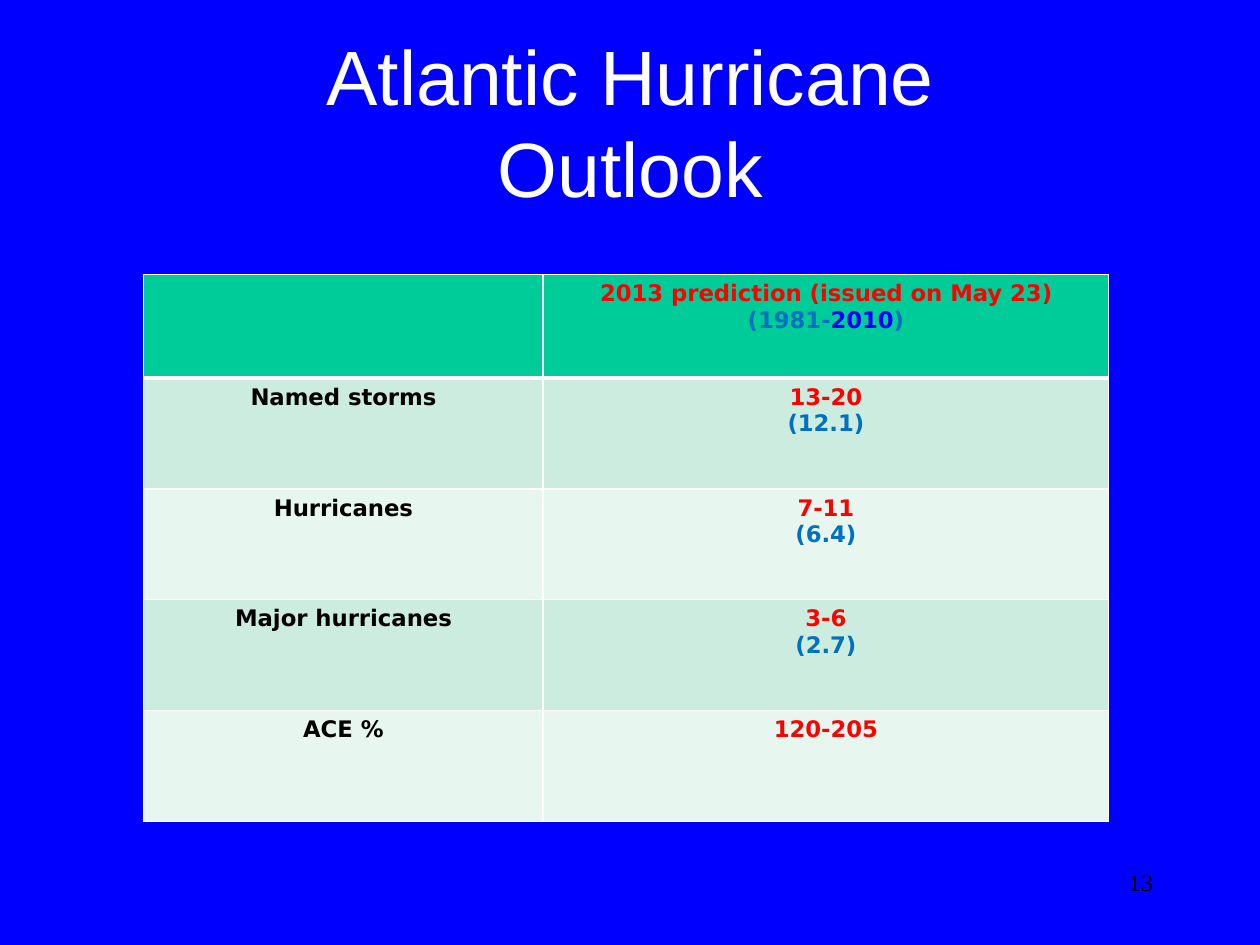
"""Build the Atlantic hurricane outlook slide."""
import pptx
import pptx.util
import pptx.dml.color
import pptx.enum.text
import pptx.oxml.ns
import lxml.etree

Inches = pptx.util.Inches
Align = pptx.enum.text.PP_ALIGN
Anchor = pptx.enum.text.MSO_ANCHOR

COLORS = {
    "blue": "0000FF", "white": "FFFFFF", "black": "000000", "red": "FF0000",
    "sky": "0070C0", "green": "00CC99", "mint": "CBECDE", "pale": "E7F6EF",
}
TITLE = [[("Atlantic Hurricane Outlook", "white")]]
NUMBER = [[("13", "black")]]
HEAD = [
    [("2013 prediction (issued on May 23)", "red")],
    [("(1981-", "sky"), ("2010", "blue"), (")", "sky")],
]
ROWS = [
    ("Named storms", "13-20", "(12.1)"),
    ("Hurricanes", "7-11", "(6.4)"),
    ("Major hurricanes", "3-6", "(2.7)"),
    ("ACE %", "120-205", None),
]
WIDTHS = [3.17, 4.49]
HEIGHTS = [0.82] + [0.88] * len(ROWS)


def color(name):
    return pptx.dml.color.RGBColor.from_string(COLORS[name])


def write(frame, lines, font, size, align, bold=False):
    for i, line in enumerate(lines):
        para = frame.paragraphs[0] if i == 0 else frame.add_paragraph()
        para.alignment = align
        for text, tint in line:
            run = para.add_run()
            run.text = text
            run.font.name = font
            run.font.size = pptx.util.Pt(size)
            run.font.bold = bold
            run.font.color.rgb = color(tint)


def add_text(slide, place, lines, font, size, align, anchor):
    frame = slide.shapes.add_textbox(*map(Inches, place)).text_frame
    frame.word_wrap = True
    frame.vertical_anchor = anchor
    write(frame, lines, font, size, align)


def edge(cell, side, points):
    qn = pptx.oxml.ns.qn
    props = cell._tc.get_or_add_tcPr()
    line = lxml.etree.SubElement(props, qn("a:ln" + side), w=str(pptx.util.Pt(points)))
    fill = lxml.etree.SubElement(line, qn("a:solidFill"))
    lxml.etree.SubElement(fill, qn("a:srgbClr"), val=COLORS["white"])


def add_grid(slide):
    cells = [([], HEAD)]
    for label, range_, mean in ROWS:
        values = [[(range_, "red")]]
        if mean:
            values.append([(mean, "sky")])
        cells.append(([[(label, "black")]], values))
    place = (1.14, 2.18, sum(WIDTHS), sum(HEIGHTS))
    table = slide.shapes.add_table(len(cells), len(WIDTHS), *map(Inches, place)).table
    for col, width in zip(table.columns, WIDTHS):
        col.width = Inches(width)
    for r, row in enumerate(cells):
        table.rows[r].height = Inches(HEIGHTS[r])
        shade = "green" if r == 0 else ("pale", "mint")[r % 2]
        for c, lines in enumerate(row):
            cell = table.cell(r, c)
            thick = {"T": r == 1, "B": r == 0}
            for side in "LRTB":
                edge(cell, side, 3 if thick.get(side) else 1)
            cell.fill.solid()
            cell.fill.fore_color.rgb = color(shade)
            write(cell.text_frame, lines, "DejaVu Sans", 13, Align.CENTER, True)


def main():
    deck = pptx.Presentation()
    deck.slide_width, deck.slide_height = Inches(10), Inches(7.5)
    slide = deck.slides.add_slide(deck.slide_layouts[6])
    slide.background.fill.solid()
    slide.background.fill.fore_color.rgb = color("blue")
    add_text(slide, (1.87, 0.52, 6.27, 0.88), TITLE, "Arial", 44,
             Align.CENTER, Anchor.MIDDLE)
    add_text(slide, (7.17, 6.83, 2.08, 0.5), NUMBER, "Times New Roman", 14,
             Align.RIGHT, Anchor.TOP)
    add_grid(slide)
    deck.save("out.pptx")


if __name__ == "__main__":
    main()
